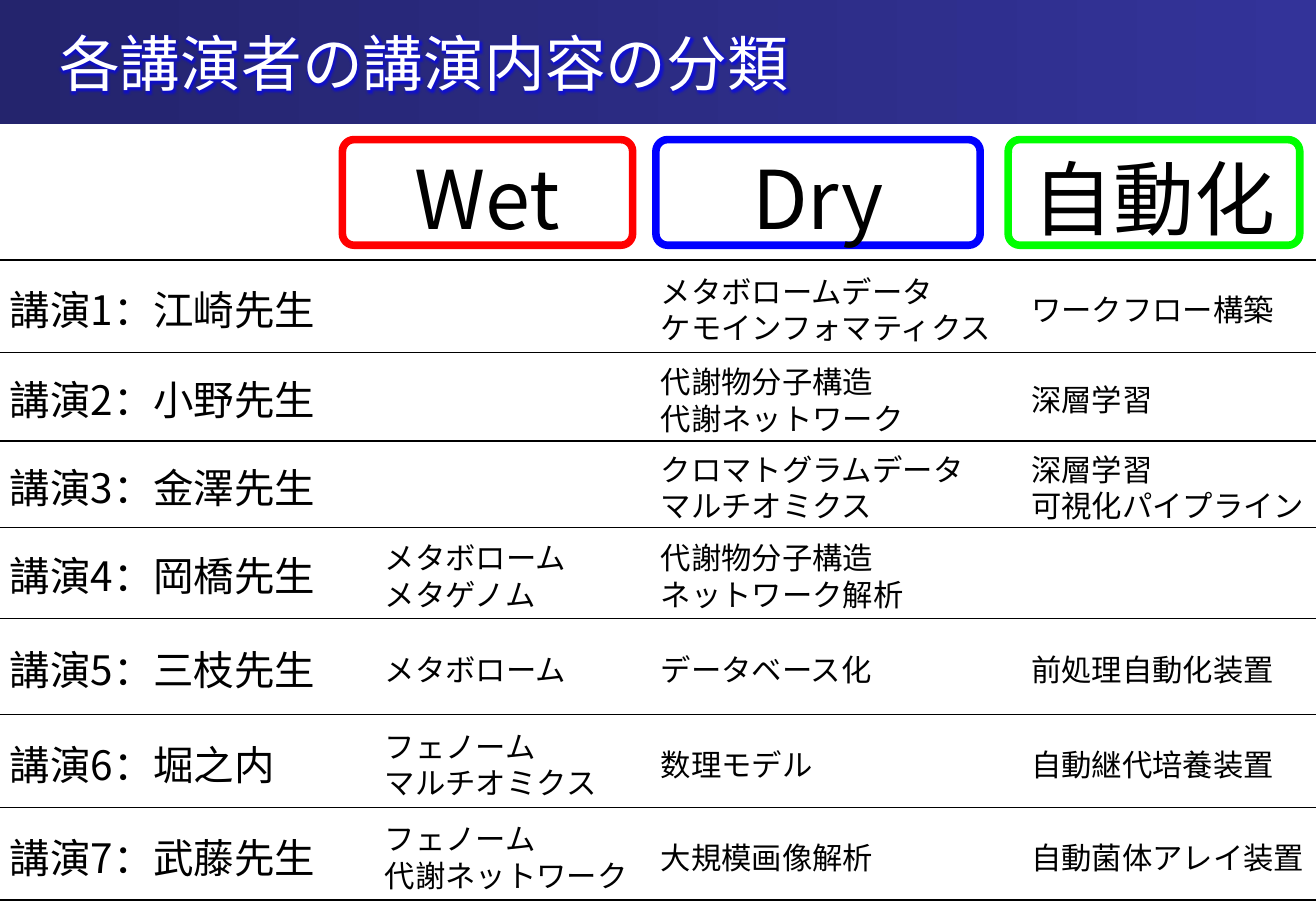
from lxml.etree import SubElement
from pptx import Presentation
from pptx.dml.color import RGBColor
from pptx.enum.shapes import MSO_CONNECTOR, MSO_SHAPE
from pptx.enum.text import MSO_ANCHOR, PP_ALIGN
from pptx.oxml.ns import qn
from pptx.util import Pt

# Content
TITLE = "各講演者の講演内容の分類"
ROWS = [  # speaker, then topics under Wet, Dry, 自動化
    ("講演1：江崎先生", [], ["メタボロームデータ", "ケモインフォマティクス"], ["ワークフロー構築"]),
    ("講演2：小野先生", [], ["代謝物分子構造", "代謝ネットワーク"], ["深層学習"]),
    ("講演3：金澤先生", [], ["クロマトグラムデータ", "マルチオミクス"],
     ["深層学習", "可視化パイプライン"]),
    ("講演4：岡橋先生", ["メタボローム", "メタゲノム"], ["代謝物分子構造", "ネットワーク解析"], []),
    ("講演5：三枝先生", ["メタボローム"], ["データベース化"], ["前処理自動化装置"]),
    ("講演6：堀之内", ["フェノーム", "マルチオミクス"], ["数理モデル"], ["自動継代培養装置"]),
    ("講演7：武藤先生", ["フェノーム", "代謝ネットワーク"], ["大規模画像解析"],
     ["自動菌体アレイ装置"]),
]

# Style
FONT = "Noto Sans CJK JP"
BLACK = RGBColor(0x00, 0x00, 0x00)
WHITE = RGBColor(0xFF, 0xFF, 0xFF)
RED = RGBColor(0xFF, 0x00, 0x00)
GREEN = RGBColor(0x00, 0xFF, 0x00)
BLUE = RGBColor(0x00, 0x00, 0xFF)
BAND_LEFT = RGBColor(0x24, 0x24, 0x6D)
BAND_RIGHT = RGBColor(0x33, 0x33, 0x99)

# Layout, in points
WIDTH, HEIGHT = 780, 540
BAND_HEIGHT = 73.5
HEADER_TOP, HEADER_HEIGHT = 82.8, 62.6
LABEL_LEFT, LABEL_WIDTH, LABEL_HEIGHT = -1.4, 221, 36
COLUMNS = [  # heading, colour, heading left and width, topic left and width
    ("Wet", RED, 203, 172, 221, 163.5),
    ("Dry", BLUE, 388.8, 192.2, 384.5, 219.5),
    ("自動化", GREEN, 597.6, 172.8, 604, 176),
]
RULES = [154.1, 208.8, 261.4, 312.5, 366.5, 423.4, 478.8, 533.5]
TEXT_DROP = 1.8  # row text sits slightly below the row centre
TOPIC_HEIGHTS = {1: 29, 2: 51}

prs = Presentation()
prs.slide_width, prs.slide_height = Pt(WIDTH), Pt(HEIGHT)
s = prs.slides.add_slide(prs.slide_layouts[6])


def write(sp, lines, size, color=BLACK, align=PP_ALIGN.LEFT, anchor=MSO_ANCHOR.MIDDLE):
    tf = sp.text_frame
    tf.word_wrap = True
    tf.vertical_anchor = anchor
    for i, line in enumerate(lines):
        p = tf.add_paragraph() if i else tf.paragraphs[0]
        p.add_run().text = line
        p.alignment = align
        p.font.size = Pt(size)
        p.font.name = FONT
        p.font.color.rgb = color
        SubElement(p._p.pPr.find(qn("a:defRPr")), qn("a:ea"), typeface=FONT)
    return tf


def add_text(left, top, width, height, lines, size, color=BLACK):
    sp = s.shapes.add_textbox(Pt(left), Pt(top), Pt(width), Pt(height))
    return write(sp, lines, size, color)


def add_box(kind, left, top, width, height):
    sp = s.shapes.add_shape(kind, Pt(left), Pt(top), Pt(width), Pt(height))
    sp.shadow.inherit = False
    return sp


# Title band
band = add_box(MSO_SHAPE.RECTANGLE, 0, 0, WIDTH, BAND_HEIGHT)
band.fill.gradient()
band.fill.gradient_angle = 0
for stop, color in zip(band.fill.gradient_stops, (BAND_LEFT, BAND_RIGHT)):
    stop.color.rgb = color
band.line.fill.background()

# Title with a blue glow
tf = add_text(28, 15, 752, BAND_HEIGHT, [TITLE], 36, WHITE)
p = tf.paragraphs[0]
p.line_spacing = Pt(14)
effects = SubElement(p.runs[0]._r.get_or_add_rPr(), qn("a:effectLst"))
glow = SubElement(effects, qn("a:glow"), rad=str(Pt(5)))
glow_color = SubElement(glow, qn("a:srgbClr"), val=str(BLUE))
SubElement(glow_color, qn("a:alpha"), val="60000")

# Column headings
for heading, color, left, width, _, _ in COLUMNS:
    sp = add_box(MSO_SHAPE.ROUNDED_RECTANGLE, left, HEADER_TOP, width, HEADER_HEIGHT)
    sp.adjustments[0] = 0.11
    sp.fill.background()
    sp.line.color.rgb = color
    sp.line.width = Pt(4.5)
    write(sp, [heading], 48, align=PP_ALIGN.CENTER, anchor=MSO_ANCHOR.TOP)

# Row rules
for y in RULES:
    rule = s.shapes.add_connector(MSO_CONNECTOR.STRAIGHT, Pt(0), Pt(y), Pt(WIDTH), Pt(y))
    rule.line.color.rgb = BLACK
    rule.line.width = Pt(0.75)
    SubElement(rule._element.spPr, qn("a:effectLst"))

# Speakers and topics, centred between the rules
for (speaker, *topics), above, below in zip(ROWS, RULES, RULES[1:]):
    middle = (above + below) / 2 + TEXT_DROP
    add_text(LABEL_LEFT, middle - LABEL_HEIGHT / 2, LABEL_WIDTH, LABEL_HEIGHT, [speaker], 24)
    for lines, (*_, left, width) in zip(topics, COLUMNS):
        if lines:
            height = TOPIC_HEIGHTS[len(lines)]
            tf = add_text(left, middle - height / 2, width, height, lines, 18)
            tf.margin_right = 0

prs.save("out.pptx")
